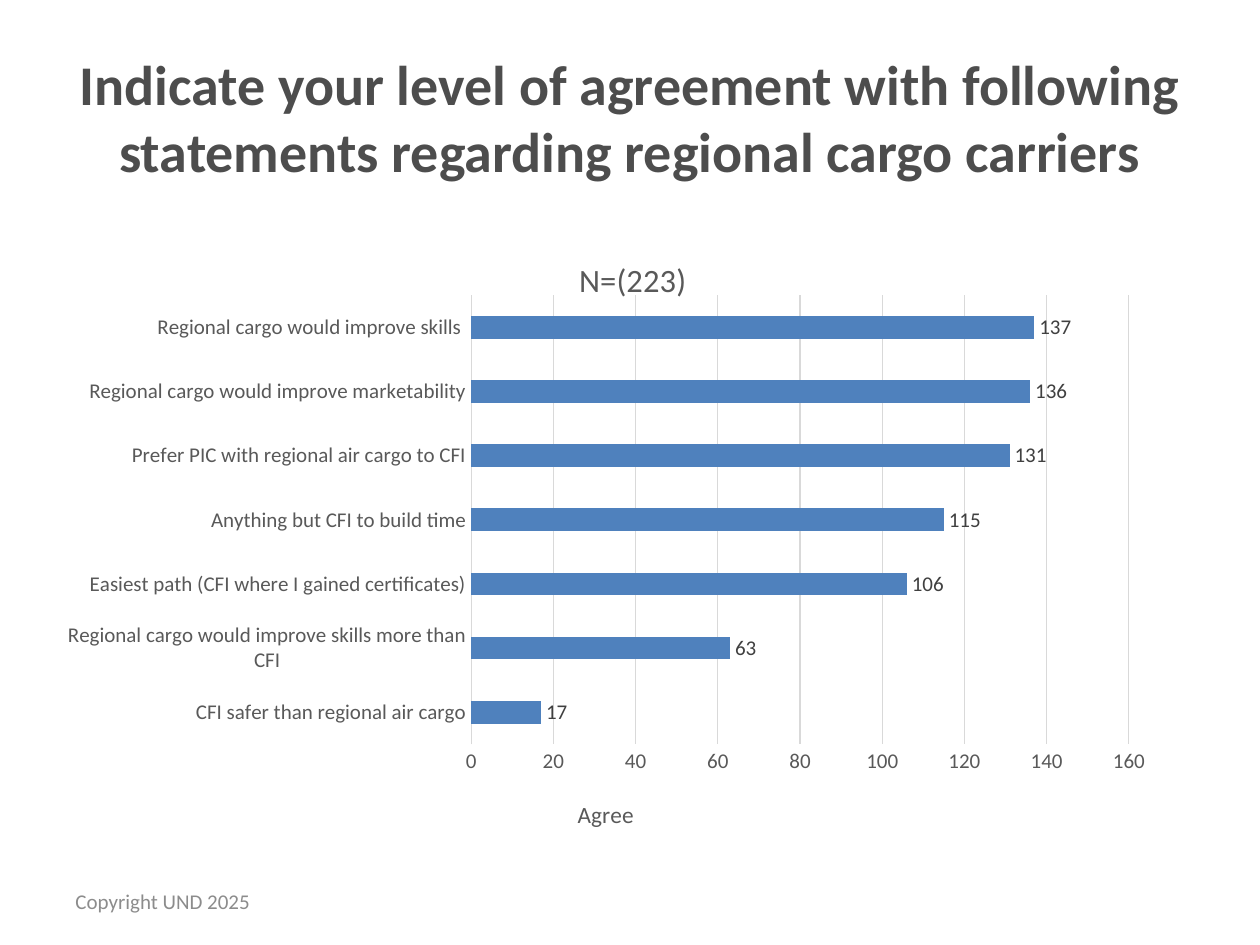
from dataclasses import dataclass

from lxml import etree
from pptx import Presentation
from pptx.chart.data import CategoryChartData
from pptx.dml.color import RGBColor
from pptx.enum.chart import XL_CHART_TYPE, XL_LABEL_POSITION, XL_TICK_MARK
from pptx.enum.text import MSO_ANCHOR, PP_ALIGN
from pptx.oxml.ns import qn
from pptx.util import Pt

BAR_CLUSTERED = XL_CHART_TYPE.BAR_CLUSTERED
OUTSIDE_END = XL_LABEL_POSITION.OUTSIDE_END
NO_TICK = XL_TICK_MARK.NONE
MIDDLE = MSO_ANCHOR.MIDDLE
LEFT, CENTER = PP_ALIGN.LEFT, PP_ALIGN.CENTER


@dataclass(frozen=True)
class Theme:
    font: str = "Calibri"
    heading: str = "4D4D4D"
    muted: str = "595959"
    value: str = "404040"
    footer: str = "8C8C8C"
    grid: str = "D9D9D9"
    bar: str = "4F81BD"
    heading_size: float = 32
    chart_title_size: float = 18.6
    axis_title_size: float = 13.3
    body_size: float = 12


THEME = Theme()

AGREEMENT = {
    "CFI safer than regional air cargo": 17,
    "Regional cargo would improve skills more than CFI": 63,
    "Easiest path (CFI where I gained certificates)": 106,
    "Anything but CFI to build time": 115,
    "Prefer PIC with regional air cargo to CFI": 131,
    "Regional cargo would improve marketability": 136,
    "Regional cargo would improve skills ": 137,
}


def style_font(font, size, color, bold=False):
    font.name = THEME.font
    font.size = Pt(size)
    font.bold = bold
    font.color.rgb = RGBColor.from_string(color)


def style_line(line, color):
    line.color.rgb = RGBColor.from_string(color)
    line.width = Pt(0.75)


def add_text(slide, box, text, *, size, color, bold=False, align=LEFT):
    frame = slide.shapes.add_textbox(*map(Pt, box)).text_frame
    frame.word_wrap = True
    frame.vertical_anchor = MIDDLE
    paragraph = frame.paragraphs[0]
    paragraph.alignment = align
    run = paragraph.add_run()
    run.text = text
    style_font(run.font, size, color, bold)


def set_layout(parent, **settings):
    for old_layout in parent.findall(qn("c:layout")):
        parent.remove(old_layout)
    layout = etree.Element(qn("c:layout"))
    manual = etree.SubElement(layout, qn("c:manualLayout"))
    for tag, setting in settings.items():
        etree.SubElement(manual, qn(f"c:{tag}")).set("val", str(setting))
    position = 0 if parent.find(qn("c:tx")) is None else 1
    parent.insert(position, layout)


def set_title(title, text, size, x, y):
    title.text_frame.text = text
    style_font(title.text_frame.paragraphs[0].runs[0].font, size, THEME.muted)
    set_layout(title._element, xMode="edge", yMode="edge", x=x, y=y)


def add_agreement_chart(slide, box):
    answers = CategoryChartData()
    answers.categories = list(AGREEMENT)
    answers.add_series("Series 1", list(AGREEMENT.values()))
    chart = slide.shapes.add_chart(BAR_CLUSTERED, *map(Pt, box), answers).chart
    style_font(chart.font, THEME.body_size, THEME.muted)
    chart.has_legend = False
    chart.has_title = True
    set_title(chart.chart_title, "N=(223)", THEME.chart_title_size, 0.45, 0.05)

    statements, counts = chart.category_axis, chart.value_axis
    for axis in (statements, counts):
        axis.major_tick_mark = axis.minor_tick_mark = NO_TICK
        style_font(axis.tick_labels.font, THEME.body_size, THEME.muted)
    style_line(statements.format.line, THEME.grid)
    statements.has_major_gridlines = False
    counts.format.line.fill.background()
    counts.minimum_scale, counts.maximum_scale, counts.major_unit = 0, 160, 20
    counts.has_major_gridlines = True
    style_line(counts.major_gridlines.format.line, THEME.grid)
    counts.has_title = True
    set_title(counts.axis_title, "Agree", THEME.axis_title_size, 0.45, 0.92)

    plot = chart.plots[0]
    plot.gap_width = 182
    plot.vary_by_categories = False
    bars = plot.series[0].format.fill
    bars.solid()
    bars.fore_color.rgb = RGBColor.from_string(THEME.bar)
    plot.has_data_labels = True
    labels = plot.data_labels
    labels.show_value = True
    labels.position = OUTSIDE_END
    style_font(labels.font, THEME.body_size, THEME.value)
    plot_area = chart._chartSpace.chart.plotArea
    set_layout(plot_area, layoutTarget="inner", xMode="edge", yMode="edge",
               x=0.36, y=0.12, w=0.58, h=0.72)


def build_survey_slide(slide, box):
    left, top, width, height = box
    margin = 36
    inner_left, inner_width = left + margin, width - 2 * margin
    add_text(slide, (inner_left, top + 21.6, inner_width, 90),
             "Indicate your level of agreement with following "
             "statements regarding regional cargo carriers",
             size=THEME.heading_size, color=THEME.heading, bold=True, align=CENTER)
    add_agreement_chart(slide, (inner_left, top + 126, inner_width, 356.4))
    add_text(slide, (inner_left, top + height - 39.6, 168, 28.8),
             "Copyright UND 2025", size=THEME.body_size, color=THEME.footer)


def main():
    deck = Presentation()
    deck.slide_width, deck.slide_height = Pt(720), Pt(540)
    slide = deck.slides.add_slide(deck.slide_layouts[6])
    build_survey_slide(slide, (0, 0, 720, 540))
    deck.save("out.pptx")


if __name__ == "__main__":
    main()
